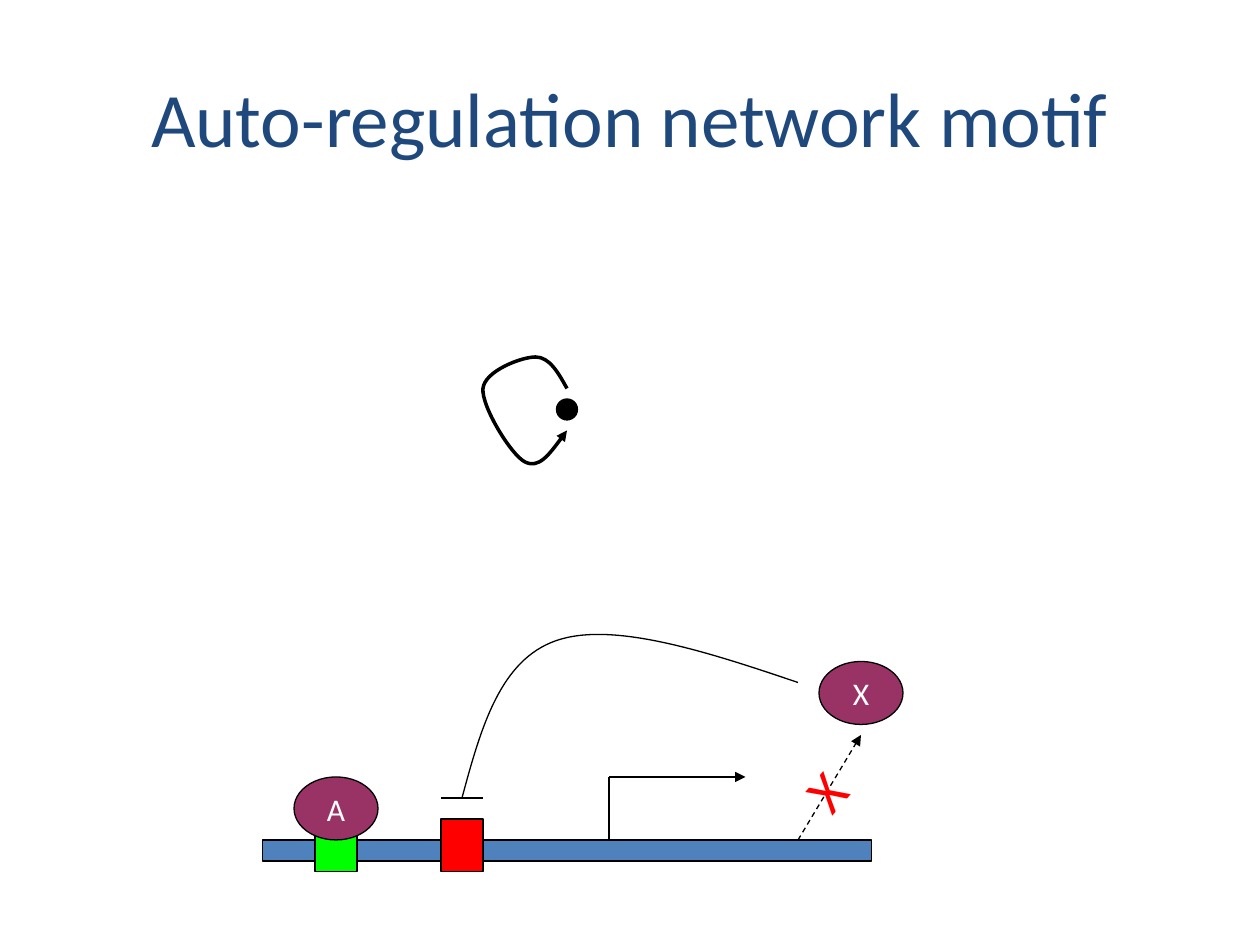
"""Build the slide on the auto-regulation network motif."""
from lxml.etree import SubElement
from pptx import Presentation
from pptx.dml.color import RGBColor
from pptx.enum.dml import MSO_LINE
from pptx.enum.shapes import MSO_CONNECTOR, MSO_SHAPE
from pptx.enum.text import MSO_ANCHOR, MSO_AUTO_SIZE, PP_ALIGN
from pptx.oxml.ns import qn
from pptx.util import Pt

COLORS = {
    "title": "1F497D", "dna": "4F81BD", "activator_site": "00FF00",
    "repressor_site": "FF0000", "protein": "993366", "label": "FFFFFF",
    "cross": "FF0000", "ink": "000000",
}


def outline(part, width=0.75, arrow=False, dash=None):
    part.line.color.rgb = RGBColor.from_string(COLORS["ink"])
    part.line.width = Pt(width)
    if dash:
        part.line.dash_style = dash
    properties = part._element.spPr
    if arrow:
        SubElement(properties.find(qn("a:ln")), qn("a:tailEnd"), type="triangle")
    if properties.find(qn("a:effectLst")) is None:
        SubElement(properties, qn("a:effectLst"))


def write(part, text, size, color, frame_format, align):
    frame = part.text_frame
    frame.text = text
    for attribute, value in frame_format.items():
        setattr(frame, attribute, value)
    paragraph = frame.paragraphs[0]
    paragraph.alignment = align
    font = paragraph.runs[0].font
    for attribute, value in {"name": "Calibri", "size": Pt(size)}.items():
        setattr(font, attribute, value)
    font.color.rgb = RGBColor.from_string(COLORS[color])


presentation = Presentation()
presentation.slide_width, presentation.slide_height = Pt(720), Pt(540)
slide = presentation.slides.add_slide(presentation.slide_layouts[5])
shapes = slide.shapes

heading = shapes.title
heading_place = {"left": 36, "top": 21.6, "width": 648, "height": 90}
for attribute, value in heading_place.items():
    setattr(heading, attribute, Pt(value))
write(heading, "Auto-regulation network motif", 44, "title",
      {"vertical_anchor": MSO_ANCHOR.MIDDLE, "word_wrap": True}, PP_ALIGN.CENTER)

gene_parts = [
    (MSO_SHAPE.RECTANGLE, 150, 480, 348, 12, "dna", ""),
    (MSO_SHAPE.RECTANGLE, 180, 468, 24, 30, "activator_site", ""),
    (MSO_SHAPE.RECTANGLE, 252, 468, 24, 30, "repressor_site", ""),
    (MSO_SHAPE.OVAL, 168, 444, 48, 36, "protein", "A"),
    (MSO_SHAPE.OVAL, 468, 378, 48, 36, "protein", "X"),
    (MSO_SHAPE.OVAL, 318, 228, 12, 12, "ink", ""),
]
for preset, left, top, width, height, color, label in gene_parts:
    gene_part = shapes.add_shape(preset, Pt(left), Pt(top), Pt(width), Pt(height))
    gene_part.shadow.inherit = False
    gene_part.fill.solid()
    gene_part.fill.fore_color.rgb = RGBColor.from_string(COLORS[color])
    outline(gene_part)
    if label:
        write(gene_part, label, 18, "label",
              {"vertical_anchor": MSO_ANCHOR.MIDDLE, "word_wrap": False},
              PP_ALIGN.CENTER)

strokes = [
    (348, 480, 348, 444, False, None),
    (348, 444, 426, 444, True, None),
    (252, 456, 276, 456, False, None),
    (456, 480, 492, 420, True, MSO_LINE.DASH),
]
for x1, y1, x2, y2, arrow, dash in strokes:
    stroke = shapes.add_connector(
        MSO_CONNECTOR.STRAIGHT, Pt(x1), Pt(y1), Pt(x2), Pt(y2))
    outline(stroke, arrow=arrow, dash=dash)

repression = [(456, 390), (403, 372), (350, 355), (318, 366),
              (286, 377), (275, 415), (264, 456)]
self_loop = [(324, 222), (319, 213), (314, 204), (306, 204),
             (298, 204), (277, 212), (276, 222),
             (275, 232), (292, 260), (300, 264),
             (308, 268), (316, 257), (324, 246)]
for points, width, arrow in [(repression, 0.75, False), (self_loop, 2, True)]:
    builder = shapes.build_freeform(*points[0], scale=Pt(1))
    builder.add_line_segments(points[1:], close=False)
    curve = builder.convert_to_shape()
    curve.shadow.inherit = False
    curve.fill.background()
    outline(curve, width, arrow)
    segments = list(curve._element.iter(qn("a:lnTo")))
    track = segments[0].getparent()
    for start in range(0, len(segments), 3):
        bezier = SubElement(track, qn("a:cubicBezTo"))
        for segment in segments[start:start + 3]:
            bezier.append(segment[0])
            track.remove(segment)

cross = shapes.add_textbox(Pt(455), Pt(427), Pt(36), Pt(45.4))
cross.rotation = 310.7
write(cross, "X", 32, "cross",
      {"word_wrap": False, "auto_size": MSO_AUTO_SIZE.SHAPE_TO_FIT_TEXT},
      PP_ALIGN.LEFT)

presentation.save("out.pptx")
